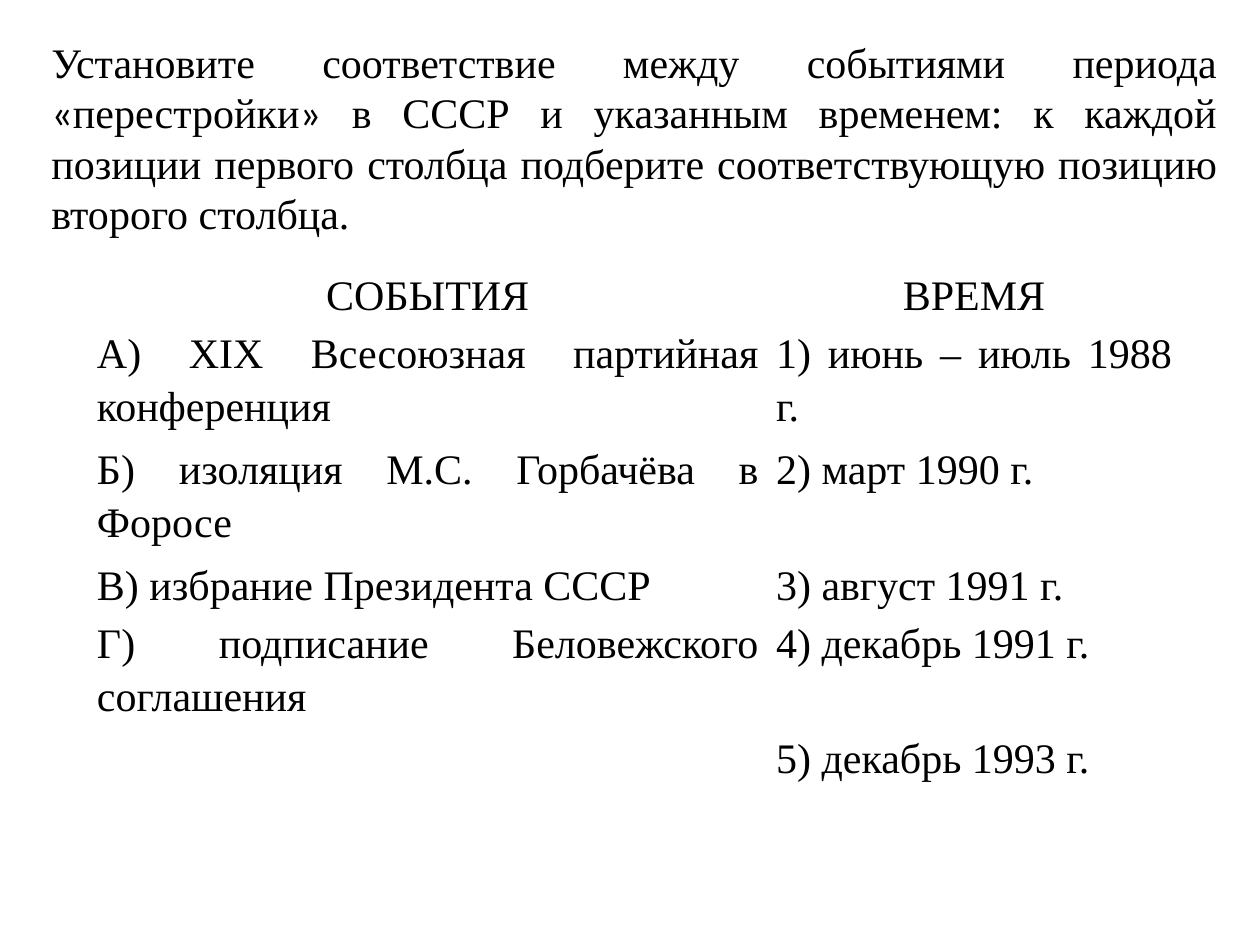
from pptx import Presentation
from pptx.dml.color import RGBColor
from pptx.enum import text as t
from pptx.util import Inches, Pt

BLACK = RGBColor(0, 0, 0)
SERIF = "Times New Roman"
SANS = "Calibri"
LINE = 0.46

TASK = [
    ("Установите соответствие между событиями периода ", SERIF),
    ("«", SANS),
    ("перестройки", SERIF),
    ("»", SANS),
    (" в СССР и указанным временем: к каждой позиции первого столбца "
     "подберите соответствующую позицию второго столбца.", SERIF),
]
ROWS = [
    ("СОБЫТИЯ", "ВРЕМЯ", 1),
    ("А) XIX Всесоюзная партийная конференция", "1) июнь – июль 1988 г.", 2),
    ("Б) изоляция М.С. Горбачёва в Форосе", "2) март 1990 г.", 2),
    ("В) избрание Президента СССР", "3) август 1991 г.", 1),
    ("Г) подписание Беловежского соглашения", "4) декабрь 1991 г.", 2),
    ("", "5) декабрь 1993 г.", 1),
]


def style(run, face=SERIF):
    run.font.name = face
    run.font.size = Pt(24)
    run.font.color.rgb = BLACK


def add_task(slide):
    box = slide.shapes.add_textbox(Inches(0.31), Inches(0.23), Inches(9.45), Inches(1.72))
    frame = box.text_frame
    frame.word_wrap = True
    frame.auto_size = t.MSO_AUTO_SIZE.SHAPE_TO_FIT_TEXT
    frame.vertical_anchor = t.MSO_ANCHOR.MIDDLE
    para = frame.paragraphs[0]
    para.alignment = t.PP_ALIGN.JUSTIFY
    for words, face in TASK:
        run = para.add_run()
        run.text = words
        style(run, face)


def fill_cell(cell, words, align):
    cell.fill.background()
    cell.margin_left = cell.margin_right = Inches(0.07)
    cell.margin_top = cell.margin_bottom = 0
    para = cell.text_frame.paragraphs[0]
    para.text = words
    para.alignment = align
    para.line_spacing = 1.15
    for run in para.runs:
        style(run)


def add_match(slide):
    high = LINE * sum(row[2] for row in ROWS)
    grid = slide.shapes.add_table(
        len(ROWS), 2, Inches(0.7), Inches(2.11), Inches(8.67), Inches(high)).table
    grid.first_row = grid.horz_banding = False
    for col, wide in zip(grid.columns, (5.39, 3.28)):
        col.width = Inches(wide)
    for i, (event, time, lines) in enumerate(ROWS):
        grid.rows[i].height = Inches(LINE * lines)
        align = t.PP_ALIGN.JUSTIFY if i else t.PP_ALIGN.CENTER
        for j, words in enumerate((event, time)):
            fill_cell(grid.cell(i, j), words, align)


def main():
    deck = Presentation()
    deck.slide_width, deck.slide_height = Inches(10), Inches(7.5)
    slide = deck.slides.add_slide(deck.slide_layouts[6])
    add_task(slide)
    add_match(slide)
    deck.save("out.pptx")


if __name__ == "__main__":
    main()
